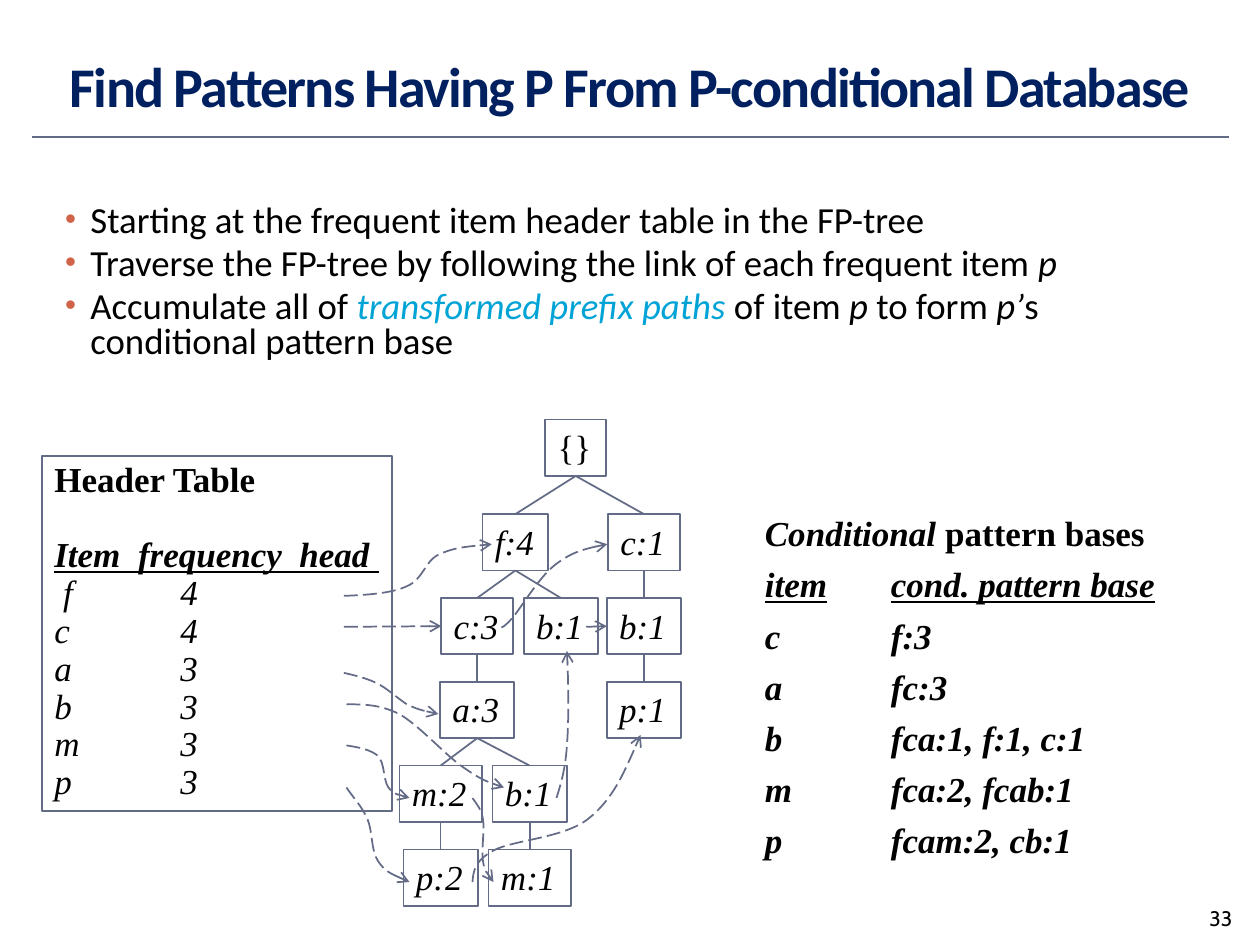
from pptx import Presentation
from pptx.dml.color import RGBColor
from pptx.enum.dml import MSO_LINE
from pptx.enum.shapes import MSO_CONNECTOR, MSO_SHAPE
from pptx.enum.text import MSO_ANCHOR, PP_ALIGN
from pptx.oxml.ns import qn
from pptx.util import Pt
from lxml.etree import SubElement

NAVY = RGBColor(0x00, 0x20, 0x60)
SLATE = RGBColor(0x64, 0x6B, 0x86)
CYAN = RGBColor(0x00, 0xA3, 0xD6)
BLACK = RGBColor(0, 0, 0)
BULLET = "D16349"
SERIF, SANS = "Times New Roman", "Calibri"
TOP, LEFT, BOTTOM = 0, 1, 2  # connection sites of a rectangle

TITLE = "Find Patterns Having P From P-conditional Database"
# Runs: (text, italic, colour)
STEPS = [
    [("Starting at the frequent item header table in the FP-tree", False, BLACK)],
    [("Traverse the FP-tree by following the link of each frequent item ", False, BLACK),
     ("p", True, BLACK)],
    [("Accumulate all of ", False, BLACK), ("transformed prefix paths", True, CYAN),
     (" of item ", False, BLACK), ("p ", True, BLACK), ("to form ", False, BLACK),
     ("p’", True, BLACK), ("s conditional pattern base", False, BLACK)],
]
HEADER_COLUMNS = "Item  frequency  head "
HEADER_ROWS = [(" f", 4), ("c", 4), ("a", 3), ("b", 3), ("m", 3), ("p", 3)]
PATTERN_BASES = [("item", "cond. pattern base"), ("c", "f:3"), ("a", "fc:3"),
                 ("b", "fca:1, f:1, c:1"), ("m", "fca:2, fcab:1"), ("p", "fcam:2, cb:1")]
COLUMN_TAB = 72

# Tree nodes: key -> (label, centre x, level, width, parent)
NODES = {
    "root": ("{}", 329, 0, 35, None),
    "f": ("f:4", 294.5, 1, 37.5, "root"),
    "c right": ("c:1", 368, 1, 41, "root"),
    "b right": ("b:1", 368, 2, 42.5, "c right"),
    "p right": ("p:1", 368, 3, 42.5, "b right"),
    "b mid": ("b:1", 320.5, 2, 42.5, "f"),
    "c": ("c:3", 272.7, 2, 41, "f"),
    "a": ("a:3", 272.7, 3, 42.5, "c"),
    "b low": ("b:1", 302.7, 4, 42.5, "a"),
    "m": ("m:2", 251.8, 4, 47, "a"),
    "p": ("p:2", 251.8, 5, 42.5, "m"),
    "m low": ("m:1", 302.7, 5, 47, "b low"),
}
LEVEL_TOPS = [239.8] + [293.8 + 47.9 * i for i in range(5)]
NODE_HEIGHT = 32.2

# Level node links: (start x, start y, target)
STRAIGHT_LINKS = [(196.5, 358.2, "c"), (335, 358.2, "b right")]
# Curved node links: a start point, then three Bezier points for each stretch
CURVED_LINKS = [
    [(196.5, 340.5), (210, 340), (224, 339), (232.5, 335), (242, 331), (242.5, 321),
     (250.5, 317), (259, 313), (270, 312), (281, 311)],
    [(286.5, 358.5), (287, 358.5), (288, 358.5), (293, 353), (298, 347), (308, 330),
     (317, 323), (326, 316), (336, 313), (347, 311)],
    [(196.5, 384.5), (203, 386), (209, 387.5), (214.5, 390), (221, 393), (227, 399),
     (232.5, 402.5), (239, 405.5), (245, 407), (250.5, 408)],
    [(198, 402.5), (207.5, 402.5), (217, 402.5), (228, 408), (239, 414), (254, 431),
     (264, 438), (274, 445), (281, 448), (288, 450)],
    [(318, 456), (320.5, 448), (323, 440), (324, 426), (325, 412), (325, 392), (324, 372)],
    [(198, 426), (205, 427), (212, 428.5), (216, 432), (220, 436), (219, 446),
     (222, 450), (225, 454), (230, 455), (234, 456)],
    [(270, 456), (272, 459), (275, 462), (276, 468), (277, 474), (275, 486),
     (276, 492), (277, 498), (279.5, 501), (282, 504)],
    [(198, 450), (202, 456), (207, 461), (210, 468), (213, 475), (212, 486),
     (216, 492), (220, 498), (227, 501), (234, 504)],
    [(270, 504), (270.5, 498), (271, 492), (282, 486), (293, 480), (322, 479),
     (336, 468), (350, 457), (358, 438.5), (366, 420)],
]

prs = Presentation()
prs.slide_width, prs.slide_height = Pt(720), Pt(540)
slide = prs.slides.add_slide(prs.slide_layouts[6])
shapes = slide.shapes


def style_font(font, size, name=SERIF, color=BLACK, bold=False, italic=False, underline=False):
    font.size, font.name, font.color.rgb = Pt(size), name, color
    font.bold, font.italic, font.underline = bold, italic, underline


def add_text_box(left, top, width, height):
    frame = shapes.add_textbox(Pt(left), Pt(top), Pt(width), Pt(height)).text_frame
    frame.word_wrap = True
    return frame


def paragraphs(frame, items):
    """Yield a paragraph of the frame for each item, adding those that lack."""
    for i, item in enumerate(items):
        yield (frame.add_paragraph() if i else frame.paragraphs[0]), item


def add_column_tab(paragraph):
    tabs = SubElement(paragraph._p.get_or_add_pPr(), qn("a:tabLst"))
    SubElement(tabs, qn("a:tab"), pos=str(Pt(COLUMN_TAB)), algn="l")


def add_outline_box(left, top, width, height):
    box = shapes.add_shape(MSO_SHAPE.RECTANGLE, Pt(left), Pt(top), Pt(width), Pt(height))
    box.shadow.inherit = False
    box.fill.background()
    box.line.color.rgb, box.line.width = SLATE, Pt(1)
    box.text_frame.word_wrap = False
    box.text_frame.vertical_anchor = MSO_ANCHOR.TOP
    return box


def add_line(x1, y1, x2, y2, width=1):
    line = shapes.add_connector(MSO_CONNECTOR.STRAIGHT, Pt(x1), Pt(y1), Pt(x2), Pt(y2))
    line.line.color.rgb, line.line.width = SLATE, Pt(width)
    SubElement(line._element.spPr, qn("a:effectLst"))
    return line


def make_dashed_arrow(line):
    line.color.rgb, line.width = SLATE, Pt(1)
    line.dash_style = MSO_LINE.LONG_DASH
    SubElement(line._get_or_add_ln(), qn("a:tailEnd"), type="arrow")


def add_curve(points):
    """Draw a chain of cubic Bezier stretches through every third point."""
    start, *rest = [(Pt(x), Pt(y)) for x, y in points]
    builder = shapes.build_freeform(*start)
    builder.add_line_segments(rest, close=False)
    curve = builder.convert_to_shape()
    segments = list(curve._element.iter(qn("a:lnTo")))
    for i in range(0, len(segments), 3):
        outline = segments[i].getparent()
        stretch = SubElement(outline, qn("a:cubicBezTo"))
        for segment in segments[i:i + 3]:
            stretch.append(segment[0])
            outline.remove(segment)
    curve.shadow.inherit = False
    curve.fill.background()
    return curve


# Title, rule, steps and page number
add_line(18, 78.2, 702, 78.2, 1.5)
title_frame = add_text_box(0, 24, 720, 54)
title_frame.vertical_anchor = MSO_ANCHOR.MIDDLE
title = title_frame.paragraphs[0]
title.alignment, title.line_spacing = PP_ALIGN.CENTER, 0.9
title.text = TITLE
style_font(title.font, 32, SANS, NAVY, bold=True)
title.runs[0]._r.get_or_add_rPr().set("spc", "-100")

for step, runs in paragraphs(add_text_box(30.2, 114, 660, 120), STEPS):
    step.line_spacing, step.space_before = 0.8, Pt(4.2)
    props = step._p.get_or_add_pPr()
    props.set("marL", str(Pt(14.4)))
    props.set("indent", str(-Pt(14.4)))
    SubElement(SubElement(props, qn("a:buClr")), qn("a:srgbClr"), val=BULLET)
    SubElement(props, qn("a:buSzPct"), val="85000")
    SubElement(props, qn("a:buFont"), typeface="Arial")
    SubElement(props, qn("a:buChar"), char="•")
    for text, italic, color in runs:
        run = step.add_run()
        run.text = text
        style_font(run.font, 21, SANS, color, italic=italic)

page = add_text_box(684, 514, 36, 26).paragraphs[0]
page.text = "33"
style_font(page.font, 12, "Cabin")

# Conditional pattern bases
bases_frame = add_text_box(430, 288.8, 262, 219)
heading = bases_frame.paragraphs[0]
heading.space_before = Pt(10)
style_font(heading.font, 20, bold=True)
for text, italic in (("Conditional ", True), ("pattern bases", False)):
    run = heading.add_run()
    run.text, run.font.italic = text, italic
for i, cells in enumerate(PATTERN_BASES):
    row = bases_frame.add_paragraph()
    row.text = "\t".join(cells)
    row.line_spacing, row.space_before = 0.8, Pt(10)
    add_column_tab(row)
    style_font(row.font, 20, bold=True, italic=True, underline=i == 0)

# FP-tree
boxes = {}
for key, (label, center, level, width, parent) in NODES.items():
    box = boxes[key] = add_outline_box(center - width / 2, LEVEL_TOPS[level], width, NODE_HEIGHT)
    node = box.text_frame.paragraphs[0]
    node.text, node.alignment = label, PP_ALIGN.LEFT
    style_font(node.font, 20, italic=parent is not None)
    if parent:
        edge = add_line(0, 0, 1, 1)
        edge.begin_connect(boxes[parent], BOTTOM)
        edge.end_connect(box, TOP)

# Header table
table_frame = add_outline_box(24, 260.5, 200, 203).text_frame
lines = ["Header Table", HEADER_COLUMNS] + [f"{item}\t{count}" for item, count in HEADER_ROWS]
for i, (line, text) in enumerate(paragraphs(table_frame, lines)):
    line.text, line.alignment, line.line_spacing = text, PP_ALIGN.LEFT, 0.9
    style_font(line.font, 20, bold=i < 2, italic=i > 0, underline=i == 1)
table_frame.paragraphs[0].space_after = Pt(21.6)
for line in table_frame.paragraphs[2:]:
    add_column_tab(line)

# Node links
for x, y, target in STRAIGHT_LINKS:
    link = add_line(x, y, x + 1, y)
    link.end_connect(boxes[target], LEFT)
    make_dashed_arrow(link.line)
for points in CURVED_LINKS:
    make_dashed_arrow(add_curve(points).line)

prs.save("out.pptx")
